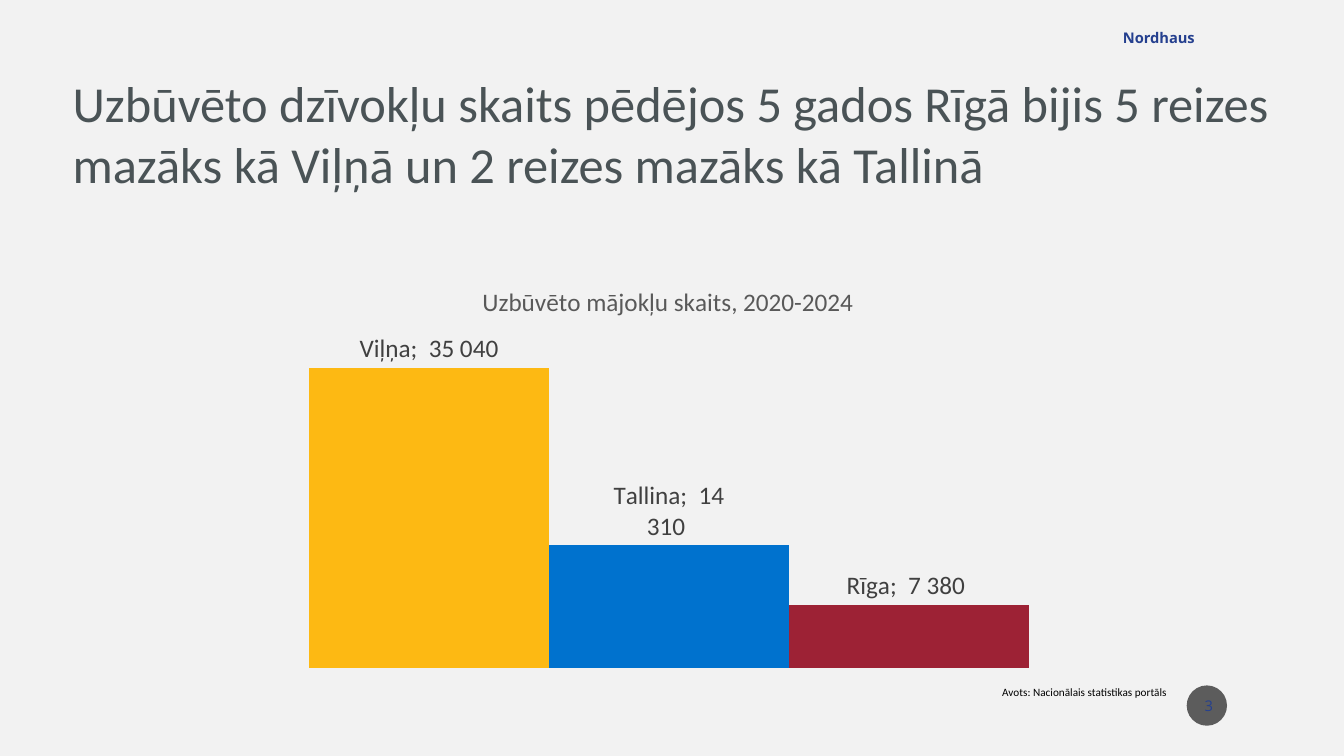
from dataclasses import dataclass

from lxml.etree import SubElement
from pptx import Presentation
from pptx.chart.data import CategoryChartData as ChartData
from pptx.dml.color import RGBColor as Rgb
from pptx.enum.chart import XL_CHART_TYPE as Kind, XL_LABEL_POSITION as Spot
from pptx.enum.shapes import MSO_SHAPE as Preset
from pptx.enum.text import MSO_ANCHOR as Anchor, PP_ALIGN as Align
from pptx.oxml import parse_xml
from pptx.oxml.ns import nsdecls, qn
from pptx.util import Inches, Pt


@dataclass(frozen=True)
class Theme:
    back: str = "F2F2F2"
    ink: str = "4A5356"
    brand: str = "25408F"
    black: str = "000000"
    badge: str = "1D1D1D"
    head: str = "595959"
    label: str = "404040"
    body: str = "Calibri"
    accent: str = "Open Sans"
    title: float = 36
    chart: float = 18
    small: float = 10.5
    note: float = 8


THEME = Theme()
CITIES = [
    ("Viļņa", 35040, "FDB913"),
    ("Tallina", 14310, "0072CE"),
    ("Rīga", 7380, "9D2235"),
]
FORMAT = '_-* #\\ ##0_-;\\-* #\\ ##0_-;_-* "-"??_-;_-'


def apply(item, **values):
    for name, value in values.items():
        setattr(item, name, value)


def style(font, size, color, name=THEME.body, bold=False):
    apply(font, size=Pt(size), name=name, bold=bold)
    font.color.rgb = Rgb.from_string(color)


def paint(fill, color):
    fill.solid()
    fill.fore_color.rgb = Rgb.from_string(color)


def write(frame, text, look, align=Align.LEFT, anchor=Anchor.TOP, right=0):
    apply(frame, word_wrap=True, vertical_anchor=anchor, margin_left=0,
          margin_top=0, margin_bottom=0, margin_right=Inches(right))
    para = frame.paragraphs[0]
    para.alignment = align
    run = para.add_run()
    run.text = text
    style(run.font, *look)
    return para


def add_text(slide, box, text, look, **place):
    shape = slide.shapes.add_textbox(*map(Inches, box))
    return write(shape.text_frame, text, look, **place)


def add_badge(slide, box, text):
    """Draw the translucent disc that holds the page number."""
    disc = slide.shapes.add_shape(Preset.OVAL, *map(Inches, box))
    disc.shadow.inherit = False
    disc.line.fill.background()
    paint(disc.fill, THEME.badge)
    color = disc._element.spPr.find(".//" + qn("a:srgbClr"))
    SubElement(color, qn("a:alpha"), val="70000")
    write(disc.text_frame, text, (THEME.small, THEME.brand, THEME.accent),
          align=Align.RIGHT, anchor=Anchor.MIDDLE, right=0.08)


def set_layout(part, before, **spots):
    """Place a chart part by fractions of the chart, after the named child."""
    for old in part.findall(qn("c:layout")):
        part.remove(old)
    tags = "".join(f'<c:{key} val="{val}"/>' for key, val in spots.items())
    layout = parse_xml(f'<c:layout {nsdecls("c")}><c:manualLayout>{tags}'
                       '</c:manualLayout></c:layout>')
    if before is None:
        part.insert(0, layout)
    else:
        part.find(qn(before)).addnext(layout)


def add_labels(series):
    labels = series.data_labels
    apply(labels, show_value=True, show_series_name=True,
          number_format=FORMAT, number_format_is_linked=False,
          position=Spot.OUTSIDE_END)
    style(labels.font, THEME.chart, THEME.label)
    mark = parse_xml(f'<c:separator {nsdecls("c")}>; </c:separator>')
    labels._element.find(qn("c:showBubbleSize")).addnext(mark)


def add_bars(slide, box, title):
    data = ChartData(number_format=FORMAT)
    data.categories = ["1"]
    for city, count, _ in CITIES:
        data.add_series(city, [count])
    frame = slide.shapes.add_chart(
        Kind.COLUMN_CLUSTERED, *map(Inches, box), data)
    chart = frame.chart
    apply(chart, has_legend=False, has_title=True)
    style(chart.font, 10, THEME.black)
    text = chart.chart_title.text_frame
    text.text = title
    style(text.paragraphs[0].runs[0].font, THEME.chart, THEME.head)
    apply(chart.value_axis, visible=False, has_major_gridlines=False,
          minimum_scale=0, maximum_scale=40000)
    chart.category_axis.visible = False
    plot = chart.plots[0]
    apply(plot, gap_width=150, overlap=0, vary_by_categories=False)
    for series, (_, _, color) in zip(plot.series, CITIES):
        paint(series.format.fill, color)
        add_labels(series)
    set_layout(chart.chart_title._element, "c:tx",
               xMode="edge", yMode="edge", x=0.33, y=0.05)
    area = chart._chartSpace.find(".//" + qn("c:plotArea"))
    set_layout(area, None, layoutTarget="inner", xMode="edge", yMode="edge",
               x=0.02, y=0.16, w=0.96, h=0.82)


def main():
    deck = Presentation()
    apply(deck, slide_width=Inches(13.33), slide_height=Inches(7.5))
    slide = deck.slides.add_slide(deck.slide_layouts[6])
    paint(slide.background.fill, THEME.back)
    add_badge(slide, (11.77, 6.8, 0.4, 0.4), "3")
    add_text(slide, (6.78, 0.27, 5.07, 0.2), "Nordhaus",
             (THEME.small, THEME.brand, THEME.accent, True),
             align=Align.RIGHT, anchor=Anchor.MIDDLE)
    head = add_text(slide, (0.72, 0.72, 11.91, 0.45),
                    "Uzbūvēto dzīvokļu skaits pēdējos 5 gados Rīgā bijis "
                    "5 reizes mazāks kā Viļņā un 2 reizes mazāks kā Tallinā",
                    (THEME.title, THEME.ink))
    apply(head, space_before=Pt(3), space_after=Pt(6))
    add_bars(slide, (1.06, 2.57, 11.15, 4.14),
             "Uzbūvēto mājokļu skaits, 2020-2024")
    add_text(slide, (9.94, 6.8, 1.92, 0.13),
             "Avots: Nacionālais statistikas portāls",
             (THEME.note, THEME.black))
    deck.save("out.pptx")


if __name__ == "__main__":
    main()
